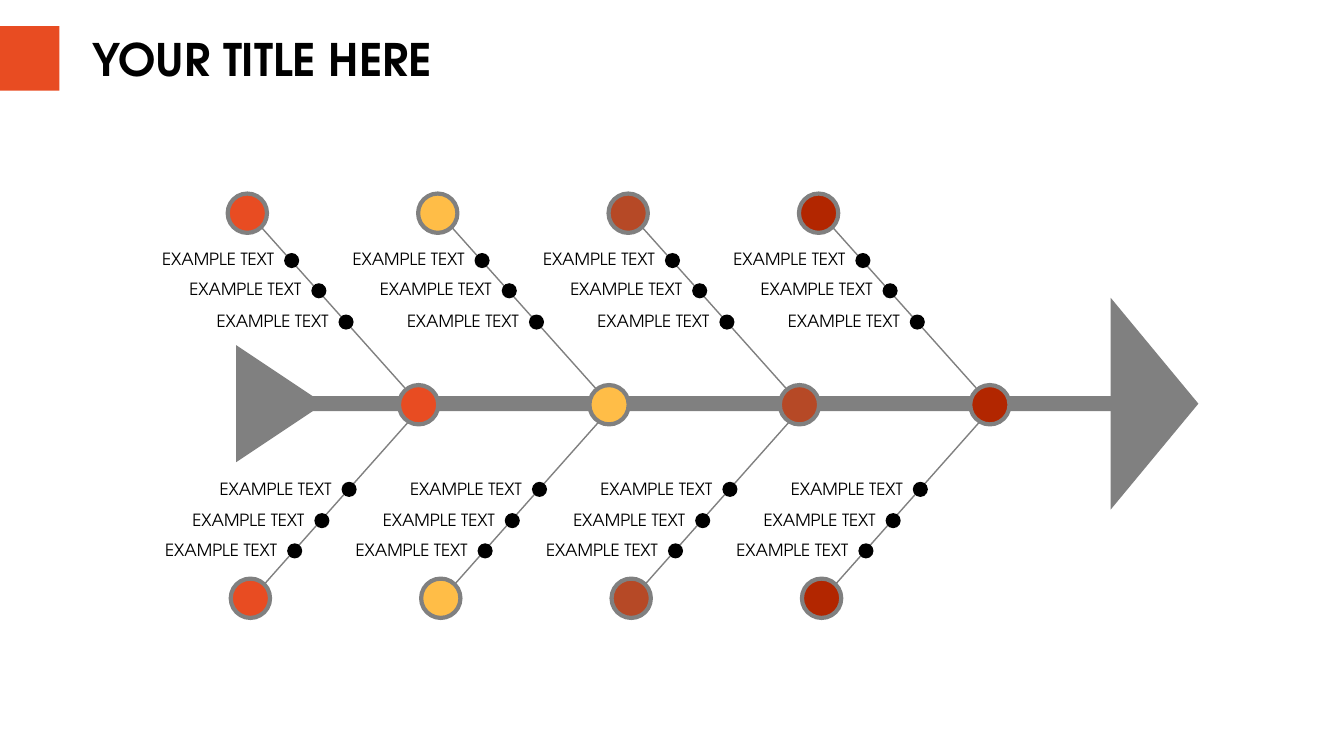
from dataclasses import dataclass

import pptx
import pptx.dml.color
import pptx.enum.shapes
import pptx.enum.text
import pptx.util
from lxml import etree
from pptx.oxml.ns import qn

PX = 9144  # EMU per px, 100 px to the inch
FONT = "TeX Gyre Adventor"
COLORS = {
    "orange": "E84C22",
    "yellow": "FFBD47",
    "brown": "B64926",
    "red": "B22600",
    "gray": "808080",
    "black": "000000",
}
CATEGORIES = ["orange", "yellow", "brown", "red"]
CAUSES = ["EXAMPLE TEXT"] * 3
PITCH = 189
NODE, DOT = 39, 15
CAUSE_DX, CAUSE_DY = 27, 30.5
SHAPE = pptx.enum.shapes.MSO_SHAPE
ALIGN = pptx.enum.text.PP_ALIGN
ANCHOR = pptx.enum.text.MSO_ANCHOR


@dataclass
class Side:
    """Ribs on one side of the spine, placed for the first category."""
    joint: tuple[int, int]
    tip: tuple[int, int]
    node: tuple[int, int]
    label: tuple[int, int]
    dot: tuple[int, int]
    direction: int  # 1 when the causes step downwards, -1 upwards


SIDES = [
    Side((402, 385), (259, 225), (226, 192), (150, 242), (282, 251), 1),
    Side((405, 419), (262, 580), (229, 574), (153, 531), (285, 539), -1),
]


def rgb(name: str) -> pptx.dml.color.RGBColor:
    return pptx.dml.color.RGBColor.from_string(COLORS[name])


def emu(*lengths: int) -> list[int]:
    return [length * PX for length in lengths]


def add_shape(shapes, kind, x: int, y: int, w: int, h: int, color: str):
    sp = shapes.add_shape(kind, *emu(x, y, w, h))
    sp.shadow.inherit = False
    sp.fill.solid()
    sp.fill.fore_color.rgb = rgb(color)
    sp.line.fill.background()
    return sp


def add_node(shapes, x: int, y: int, color: str) -> None:
    sp = add_shape(shapes, SHAPE.OVAL, x, y, NODE, NODE, color)
    sp.line.color.rgb = rgb("gray")
    sp.line.width = pptx.util.Pt(3)


def add_rib(shapes, start: tuple[int, int], end: tuple[int, int]) -> None:
    line = shapes.add_connector(
        pptx.enum.shapes.MSO_CONNECTOR.STRAIGHT, *emu(*start, *end))
    line.line.color.rgb = rgb("gray")
    line.line.width = pptx.util.Pt(1)
    etree.SubElement(line._element.spPr, qn("a:effectLst"))


def add_text(shapes, text: str, x: int, y: int, w: int, h: int, size: int,
             align, bold: bool = False, wrap: bool = False):
    sp = shapes.add_textbox(*emu(x, y, w, h))
    tf = sp.text_frame
    tf.text = text
    tf.word_wrap = wrap
    p = tf.paragraphs[0]
    p.alignment = align
    font = p.runs[0].font
    font.name = FONT
    font.size = pptx.util.Pt(size)
    font.bold = bold
    font.color.rgb = rgb("black")
    return sp


def add_cause(shapes, text: str, side: Side, dx: int, index: int) -> None:
    """Add one label with its dot on the rib, as a group."""
    dx += index * CAUSE_DX
    dy = side.direction * round(index * CAUSE_DY)
    group = shapes.add_group_shape().shapes
    label = add_text(group, text, side.label[0] + dx, side.label[1] + dy,
                     132, 30, 12, ALIGN.RIGHT)
    label.text_frame.auto_size = pptx.enum.text.MSO_AUTO_SIZE.SHAPE_TO_FIT_TEXT
    add_shape(group, SHAPE.OVAL, side.dot[0] + dx, side.dot[1] + dy,
              DOT, DOT, "black")


def add_title(shapes) -> None:
    add_shape(shapes, SHAPE.RECTANGLE, 0, 26, 59, 64, "orange")
    title = add_text(shapes, "YOUR TITLE HERE", 82, 26, 370, 64, 32,
                     ALIGN.LEFT, bold=True, wrap=True)
    title.text_frame.vertical_anchor = ANCHOR.MIDDLE
    title.text_frame.paragraphs[0].space_before = pptx.util.Pt(6.4)


def add_spine(shapes) -> None:
    add_shape(shapes, SHAPE.RECTANGLE, 290, 393, 857, 15, "gray")
    for x, width in ((1041, 210), (220, 116)):
        triangle = add_shape(shapes, SHAPE.ISOSCELES_TRIANGLE,
                             x, 357, width, 87, "gray")
        triangle.rotation = 90
    for i, color in enumerate(CATEGORIES):
        add_node(shapes, 396 + i * PITCH, 382, color)


def add_side(shapes, side: Side) -> None:
    for i, color in enumerate(CATEGORIES):
        dx = i * PITCH
        add_rib(shapes, (side.joint[0] + dx, side.joint[1]),
                (side.tip[0] + dx, side.tip[1]))
        add_node(shapes, side.node[0] + dx, side.node[1], color)
        for index, text in enumerate(CAUSES):
            add_cause(shapes, text, side, dx, index)


def main() -> None:
    prs = pptx.Presentation()
    prs.slide_width, prs.slide_height = emu(1334, 750)
    shapes = prs.slides.add_slide(prs.slide_layouts[6]).shapes
    add_title(shapes)
    add_spine(shapes)
    for side in SIDES:
        add_side(shapes, side)
    prs.save("out.pptx")


if __name__ == "__main__":
    main()
